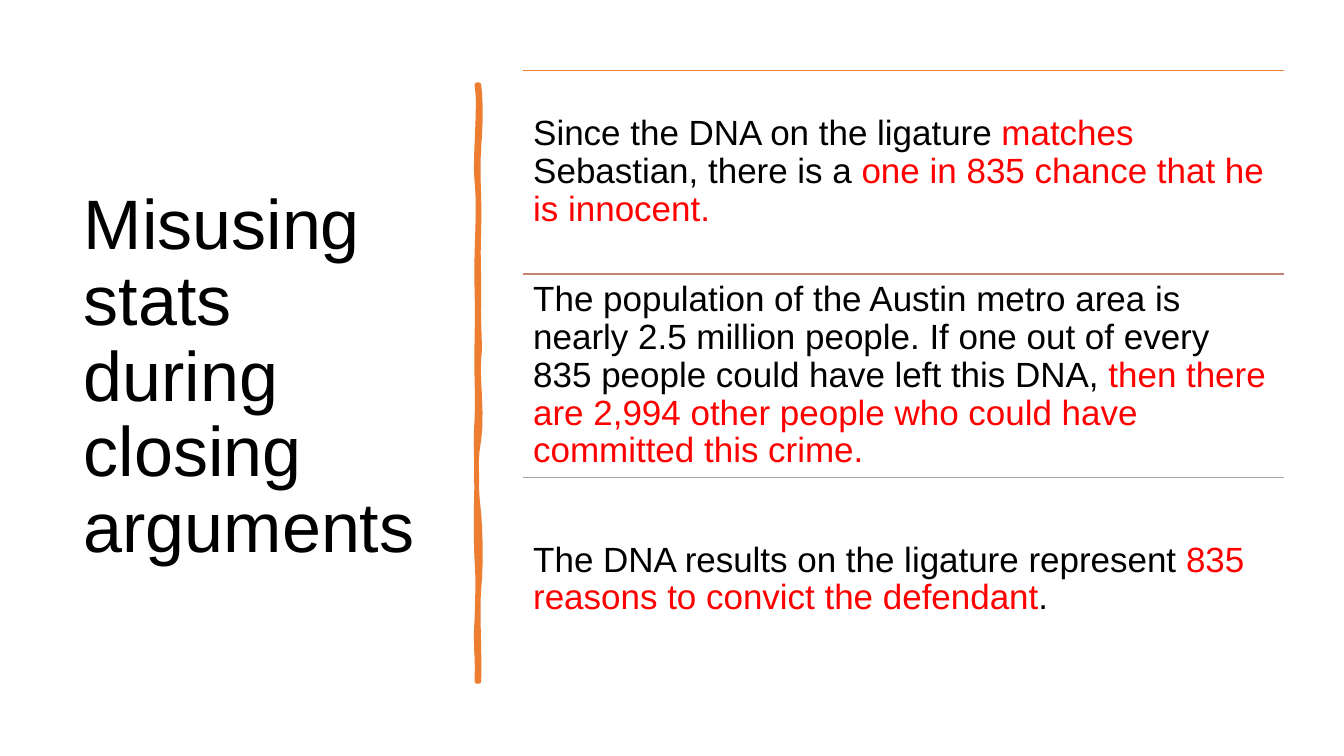
from typing import NamedTuple

from lxml import etree
from pptx import Presentation, util as u
from pptx.dml.color import RGBColor
from pptx.enum import shapes, text
from pptx.oxml import ns

# Grid of 1333 columns by 750 rows with square cells
CELL = u.Inches(0.01)
COLUMNS, ROWS = 1333, 750

BLACK = RGBColor(0x00, 0x00, 0x00)
RED = RGBColor(0xFF, 0x00, 0x00)
ORANGE = RGBColor(0xED, 0x7D, 0x31)
RUST = RGBColor(0xC4, 0x81, 0x70)
GRAY = RGBColor(0xA5, 0xA5, 0xA5)
FONT = "Arial"

LIST_LEFT, LIST_TOP, LIST_WIDTH, ITEM_ROWS = 519, 70, 755, 202
CURVE_STEPS = 6


class Phrase(NamedTuple):
    wording: str
    color: RGBColor = BLACK


class Argument(NamedTuple):
    rule_color: RGBColor
    phrases: tuple[Phrase, ...]


class Curve(NamedTuple):
    """Two control points and an end point, in grid cells."""
    first: tuple[int, int]
    second: tuple[int, int]
    end: tuple[int, int]


ARGUMENTS = (
    Argument(ORANGE, (
        Phrase("Since the DNA on the ligature "),
        Phrase("matches ", RED),
        Phrase("Sebastian, there is a "),
        Phrase("one in 835 chance that he is innocent.", RED),
    )),
    Argument(RUST, (
        Phrase("The population of the Austin metro area is nearly 2.5 million people. "
               "If one out of every 835 people could have left this DNA, "),
        Phrase("then there are 2,994 other people who could have "
               "committed this crime.", RED),
    )),
    Argument(GRAY, (
        Phrase("The DNA results on the ligature represent "),
        Phrase("835 reasons to convict the defendant", RED),
        Phrase("."),
    )),
)

# Brush stroke: down the right edge, then up the left edge
BRUSH_START = (475, 84)
BRUSH_CURVES = (
    Curve((477, 102), (477, 119), (475, 146)),
    Curve((473, 173), (476, 195), (475, 226)),
    Curve((474, 257), (475, 262), (475, 294)),
    Curve((474, 325), (477, 342), (475, 356)),
    Curve((473, 370), (479, 414), (475, 436)),
    Curve((471, 457), (472, 484), (475, 510)),
    Curve((477, 536), (477, 564), (475, 584)),
    Curve((473, 603), (476, 650), (475, 676)),
    Curve((474, 676), (473, 676), (473, 676)),
    Curve((474, 646), (471, 644), (473, 613)),
    Curve((474, 583), (474, 570), (473, 557)),
    Curve((472, 544), (472, 495), (473, 477)),
    Curve((473, 459), (471, 445), (473, 415)),
    Curve((474, 386), (472, 373), (473, 335)),
    Curve((474, 298), (472, 281), (473, 250)),
    Curve((474, 218), (475, 200), (473, 181)),
    Curve((470, 163), (477, 104), (473, 84)),
)


def cells(count: float) -> u.Emu:
    return u.Emu(round(count * CELL))


def style_run(run, size: float, color: RGBColor) -> None:
    run.font.name = FONT
    run.font.size = u.Pt(size)
    run.font.color.rgb = color


def add_title(slide, wording: str) -> None:
    title = slide.shapes.title
    title.left, title.top = cells(73), cells(70)
    title.width, title.height = cells(374), cells(611)
    frame = title.text_frame
    frame.text = wording
    frame.word_wrap = True
    frame.auto_size = text.MSO_AUTO_SIZE.NONE
    frame.vertical_anchor = text.MSO_ANCHOR.MIDDLE
    paragraph = frame.paragraphs[0]
    paragraph.alignment = text.PP_ALIGN.LEFT
    paragraph.line_spacing = 0.9
    style_run(paragraph.runs[0], 50, BLACK)


def add_brush_stroke(slide) -> None:
    points = []
    start = BRUSH_START
    for curve in BRUSH_CURVES:
        for step in range(1, CURVE_STEPS + 1):
            t = step / CURVE_STEPS
            weights = ((1 - t) ** 3, 3 * t * (1 - t) ** 2, 3 * t ** 2 * (1 - t), t ** 3)
            anchors = (start, *curve)
            points.append(tuple(
                cells(sum(w * anchor[axis] for w, anchor in zip(weights, anchors)))
                for axis in (0, 1)))
        start = curve.end
    builder = slide.shapes.build_freeform(*map(cells, BRUSH_START))
    builder.add_line_segments(points, close=True)
    stroke = builder.convert_to_shape()
    stroke.shadow.inherit = False
    stroke.fill.solid()
    stroke.fill.fore_color.rgb = ORANGE
    stroke.line.color.rgb = ORANGE
    stroke.line.width = u.Pt(3.25)


def add_rule(slide, top: int, color: RGBColor) -> None:
    rule = slide.shapes.add_connector(
        shapes.MSO_CONNECTOR.STRAIGHT, cells(LIST_LEFT), cells(top),
        cells(LIST_LEFT + LIST_WIDTH), cells(top))
    rule.line.color.rgb = color
    rule.line.width = u.Pt(1)
    etree.SubElement(rule.element.spPr, ns.qn("a:effectLst"))


def add_argument(slide, top: int, argument: Argument) -> None:
    add_rule(slide, top, argument.rule_color)
    box = slide.shapes.add_textbox(
        cells(LIST_LEFT), cells(top), cells(LIST_WIDTH), cells(ITEM_ROWS))
    frame = box.text_frame
    frame.word_wrap = True
    frame.vertical_anchor = text.MSO_ANCHOR.MIDDLE
    frame.margin_left = frame.margin_right = cells(10)
    frame.margin_top = frame.margin_bottom = cells(10)
    paragraph = frame.paragraphs[0]
    paragraph.line_spacing = 0.9
    for phrase in argument.phrases:
        run = paragraph.add_run()
        run.text = phrase.wording
        style_run(run, 25, phrase.color)


def main() -> None:
    presentation = Presentation()
    presentation.slide_width = cells(COLUMNS)
    presentation.slide_height = cells(ROWS)
    slide = presentation.slides.add_slide(presentation.slide_layouts.get_by_name("Title Only"))

    # Title and divider
    add_title(slide, "Misusing stats during closing arguments")
    add_brush_stroke(slide)

    # Ruled list of arguments
    for index, argument in enumerate(ARGUMENTS):
        add_argument(slide, LIST_TOP + index * ITEM_ROWS, argument)

    presentation.save("out.pptx")


if __name__ == "__main__":
    main()
